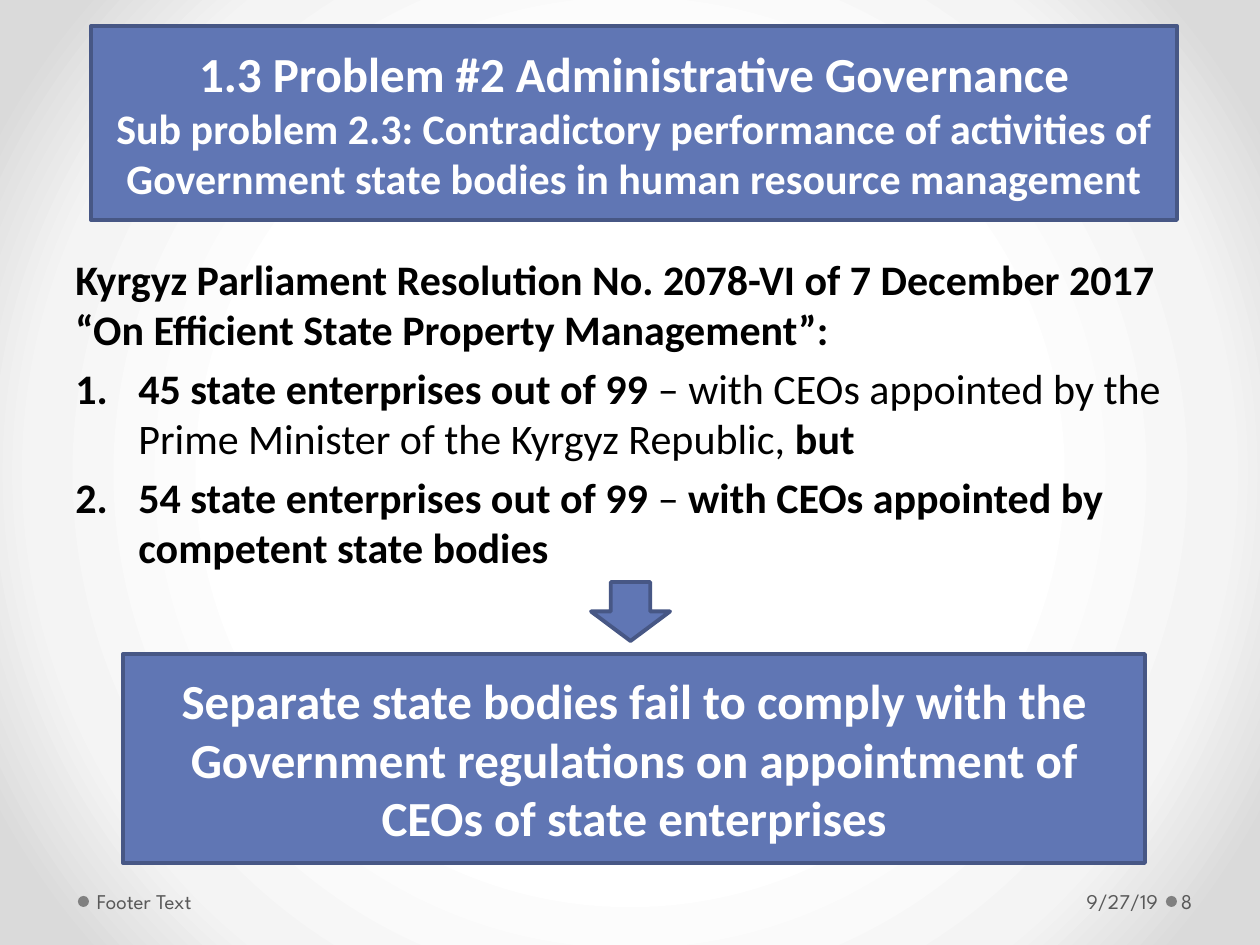
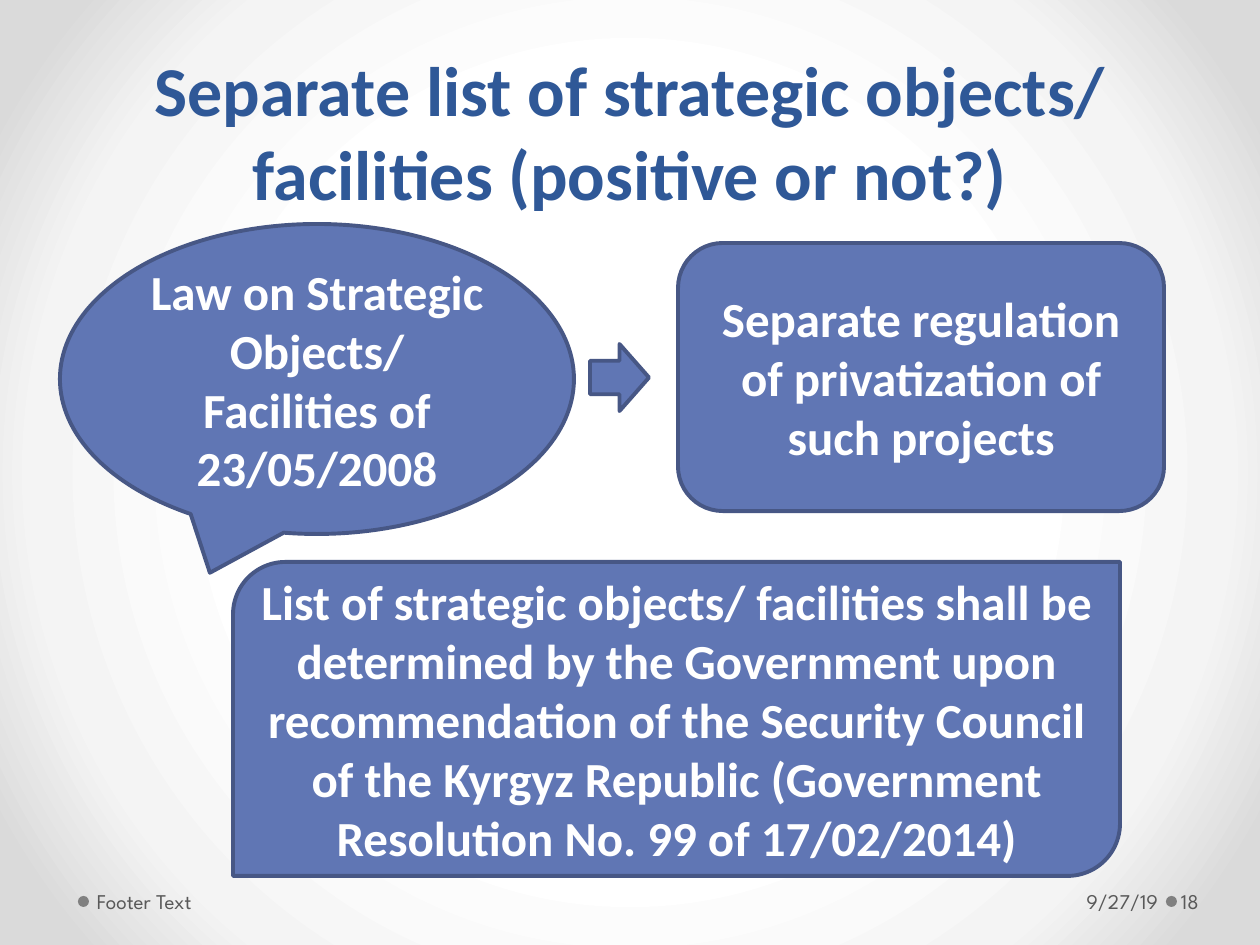
"""Build two slides on state enterprise governance and strategic objects."""
from pptx import Presentation
from pptx.dml.color import RGBColor
from pptx.enum.shapes import MSO_SHAPE
from pptx.enum.text import MSO_ANCHOR, PP_ALIGN
from pptx.oxml import parse_xml
from pptx.oxml.ns import nsdecls, qn
from pptx.util import Pt

PX = 914400 / 126
PANEL_BLUE = RGBColor(0x60, 0x76, 0xB4)
PANEL_EDGE = RGBColor(0x47, 0x57, 0x85)
TITLE_BLUE = RGBColor(0x2F, 0x58, 0x97)
FOOTER_GREY = RGBColor(0x59, 0x59, 0x59)
DOT_GREY = RGBColor(0x80, 0x80, 0x80)
WHITE = RGBColor(0xFF, 0xFF, 0xFF)
BLACK = RGBColor(0, 0, 0)
TEXT_FONT = "Calibri"
FOOTER_FONT = "League Spartan"
BACKDROP_STOPS = [(50, "FFFFFF"), (76, "F4F4F4"), (92, "DADADA")]


def write(shape, paragraphs, color, align=PP_ALIGN.LEFT, anchor=MSO_ANCHOR.TOP,
          font=TEXT_FONT):
    """Fill a shape with paragraphs, each a list of (text, size, bold) runs."""
    frame = shape.text_frame
    frame.word_wrap = True
    frame.vertical_anchor = anchor
    for index, runs in enumerate(paragraphs):
        paragraph = frame.add_paragraph() if index else frame.paragraphs[0]
        paragraph.alignment = align
        for text, size, bold in runs:
            run = paragraph.add_run()
            run.text = text
            run.font.name = font
            run.font.size = Pt(size)
            run.font.bold = bold
            run.font.color.rgb = color
    return frame


def add_panel(slide, preset, box, paragraphs=()):
    """Add a blue outlined shape with centred white text."""
    panel = slide.shapes.add_shape(preset, *(round(v * PX) for v in box))
    panel.shadow.inherit = False
    panel.fill.solid()
    panel.fill.fore_color.rgb = PANEL_BLUE
    panel.line.color.rgb = PANEL_EDGE
    panel.line.width = Pt(2.25)
    write(panel, paragraphs, WHITE, PP_ALIGN.CENTER, MSO_ANCHOR.MIDDLE)


deck = Presentation()
deck.slide_width = round(1260 * PX)
deck.slide_height = round(945 * PX)

for page_number in ("8", "18"):
    slide = deck.slides.add_slide(deck.slide_layouts[6])
    slide.background.fill.gradient()
    stops = "".join(
        f'<a:gs pos="{position * 1000}"><a:srgbClr val="{color}"/></a:gs>'
        for position, color in BACKDROP_STOPS)
    linear = next(slide.element.iter(qn("a:gradFill")))
    linear.getparent().replace(linear, parse_xml(
        f'<a:gradFill {nsdecls("a")} rotWithShape="1"><a:gsLst>{stops}</a:gsLst>'
        '<a:path path="circle"><a:fillToRect l="50000" t="50000" r="50000" b="50000"/>'
        '</a:path></a:gradFill>'))

    for dot_left in (1166, 78):
        dot = slide.shapes.add_shape(
            MSO_SHAPE.OVAL, *(round(v * PX) for v in (dot_left, 896, 11, 11)))
        dot.shadow.inherit = False
        dot.fill.solid()
        dot.fill.fore_color.rgb = DOT_GREY
        dot.line.fill.background()

    for text, left, width, inset_left, inset_right, align in (
            ("9/27/19", 877, 287, 13, 6, PP_ALIGN.RIGHT),
            ("Footer Text", 91, 392, 6, 13, PP_ALIGN.LEFT),
            (page_number, 1177, 77, 4, 6, PP_ALIGN.LEFT)):
        footer = slide.shapes.add_textbox(
            *(round(v * PX) for v in (left, 876, width, 50)))
        frame = write(footer, [[(text, 12, False)]], FOOTER_GREY, align,
                      MSO_ANCHOR.MIDDLE, FOOTER_FONT)
        frame.margin_left = round(inset_left * PX)
        frame.margin_right = round(inset_right * PX)

governance, strategic = deck.slides

resolution = governance.shapes.add_textbox(
    *(round(v * PX) for v in (63, 247, 1134, 630)))
resolution_frame = write(resolution, [
    [("Kyrgyz Parliament Resolution No. 2078-VI of 7 December 2017 "
      "“On Efficient State Property Management”:", 24, True)],
    [("45 state enterprises out of 99", 24, True),
     (" – with CEOs appointed by the Prime Minister of the Kyrgyz Republic, ", 24, False),
     ("but", 24, True)],
    [("54 state enterprises out of 99", 24, True),
     (" – ", 24, False),
     ("with CEOs appointed by competent state bodies", 24, True)],
], BLACK)
for finding in resolution_frame.paragraphs[1:]:
    finding.space_before = Pt(4.8)
    properties = finding._p.get_or_add_pPr()
    properties.set("marL", str(round(63 * PX)))
    properties.set("indent", str(round(-63 * PX)))
    properties.append(parse_xml(
        f'<a:buAutoNum {nsdecls("a")} type="arabicPeriod"/>'))

add_panel(governance, MSO_SHAPE.RECTANGLE, (91, 26, 1086, 194), [
    [("1.3 Problem #2 Administrative Governance", 28, True)],
    [("Sub problem 2.3: Contradictory performance of activities of "
      "Government state bodies in human resource management", 24, True)]])
add_panel(governance, MSO_SHAPE.DOWN_ARROW, (591, 582, 79, 59))
add_panel(governance, MSO_SHAPE.RECTANGLE, (123, 654, 1022, 209), [
    [("Separate state bodies fail to comply with the Government regulations "
      "on appointment of CEOs of state enterprises", 28, True)]])

heading = strategic.shapes.add_textbox(
    *(round(v * PX) for v in (63, 24, 1134, 197)))
write(heading, [[("Separate list of strategic objects/ facilities (positive or not?)",
                  40, True)]], TITLE_BLUE, PP_ALIGN.CENTER, MSO_ANCHOR.BOTTOM)

add_panel(strategic, MSO_SHAPE.OVAL_CALLOUT, (60, 224, 514, 310), [
    [("Law on Strategic Objects/ Facilities of 23/05/2008", 28, True)]])
add_panel(strategic, MSO_SHAPE.ROUNDED_RECTANGLE, (678, 243, 486, 268), [
    [("Separate regulation of privatization of such projects", 28, True)]])
add_panel(strategic, MSO_SHAPE.RIGHT_ARROW, (590, 344, 59, 67))
add_panel(strategic, MSO_SHAPE.ROUND_2_DIAG_RECTANGLE, (233, 562, 887, 314), [
    [("List of strategic objects/ facilities shall be determined by the Government "
      "upon recommendation of the Security Council of the Kyrgyz Republic "
      "(Government Resolution No. 99 of 17/02/2014)", 28, True)]])

deck.save("out.pptx")
